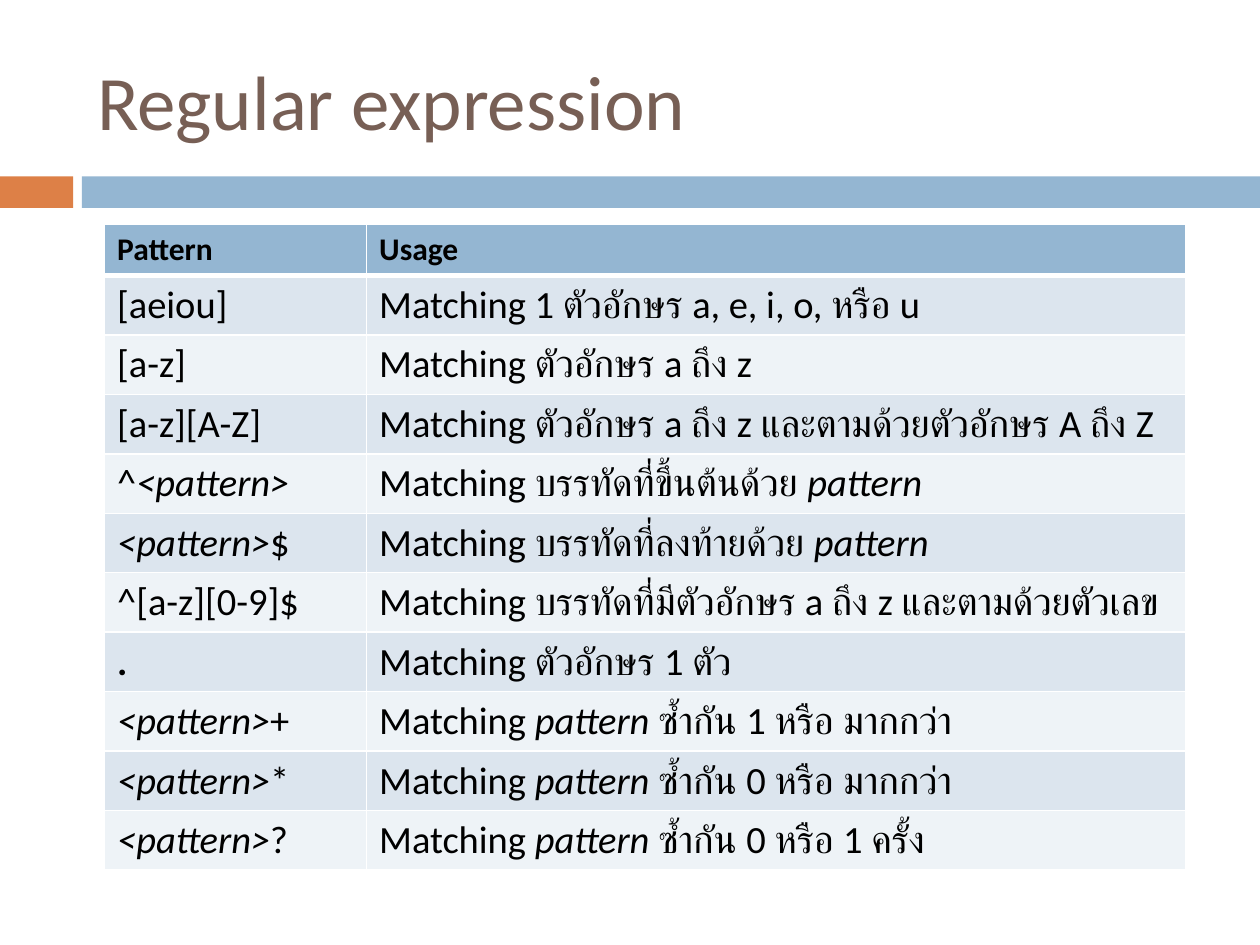
from typing import NamedTuple

from lxml import etree
from pptx import Presentation
from pptx import util as u
from pptx.dml import color
from pptx.enum import shapes, text
from pptx.oxml import ns

FONT = "Calibri"
WHITE, BLACK, BLUE = "FFFFFF", "000000", "94B6D2"
BANDS = "DCE5EE", "EEF3F7"


class Run(NamedTuple):
    words: str
    bold: bool = False
    slant: bool = False


class Bar(NamedTuple):
    left: float
    width: float
    fill: str


class Row(NamedTuple):
    pattern: list[Run]
    usage: list[Run]


SLOT = Run("<pattern>", slant=True)
NAME = Run("pattern", slant=True)
MATCH = Run("Matching ")


def repeat(sign: str, count: str) -> Row:
    return Row([SLOT, Run(sign)],
               [MATCH, Run("pattern ", slant=True), Run("ซ้ำกัน " + count)])


BARS = [Bar(0, 0.58, "DD8047"), Bar(0.65, 9.35, BLUE)]
ROWS = [
    Row([Run("Pattern", True)], [Run("Usage", True)]),
    Row([Run("[aeiou]")], [Run("Matching 1 ตัวอักษร a, e, i, o, หรือ u")]),
    Row([Run("[a-z]")], [Run("Matching ตัวอักษร a ถึง z")]),
    Row([Run("[a-z][A-Z]")],
        [Run("Matching ตัวอักษร a ถึง z และตามด้วยตัวอักษร A ถึง Z")]),
    Row([Run("^"), SLOT], [Run("Matching บรรทัดที่ขึ้นต้นด้วย "), NAME]),
    Row([SLOT, Run("$")], [Run("Matching บรรทัดที่ลงท้ายด้วย "), NAME]),
    Row([Run("^[a-z][0-9]$")],
        [Run("Matching บรรทัดที่มีตัวอักษร a ถึง z และตามด้วยตัวเลข")]),
    Row([Run(".", True)], [Run("Matching ตัวอักษร 1 ตัว")]),
    repeat("+", "1 หรือ มากกว่า"),
    repeat("*", "0 หรือ มากกว่า"),
    repeat("?", "0 หรือ 1 ครั้ง"),
]


def paint(fill, shade: str) -> None:
    fill.solid()
    fill.fore_color.rgb = color.RGBColor.from_string(shade)


def write(para, runs: list[Run], size: float, shade: str) -> None:
    for item in runs:
        run = para.add_run()
        run.text = item.words
        font = run.font
        font.name, font.size = FONT, u.Pt(size)
        font.bold, font.italic = item.bold, item.slant
        paint(font.fill, shade)


def draw_bar(slide, bar: Bar) -> None:
    box = slide.shapes.add_shape(
        shapes.MSO_SHAPE.RECTANGLE, u.Inches(bar.left), u.Inches(1.4),
        u.Inches(bar.width), u.Inches(0.25))
    box.shadow.inherit = False
    paint(box.fill, bar.fill)
    box.line.fill.background()


def edge(cell, side: str, width: float) -> None:
    line = etree.SubElement(cell._tc.get_or_add_tcPr(), ns.qn("a:ln" + side),
                            w=str(u.Pt(width)))
    fill = etree.SubElement(line, ns.qn("a:solidFill"))
    etree.SubElement(fill, ns.qn("a:srgbClr"), val=WHITE)


def draw_cell(cell, runs: list[Run], row: int) -> None:
    for side in "LRTB":
        thick = (row, side) in [(0, "B"), (1, "T")]
        edge(cell, side, 3 if thick else 1)
    paint(cell.fill, BANDS[(row - 1) % 2] if row else BLUE)
    write(cell.text_frame.paragraphs[0], runs, 22 if row else 18, BLACK)


def draw_table(slide) -> None:
    table = slide.shapes.add_table(
        len(ROWS), 2, u.Inches(0.83), u.Inches(1.78),
        u.Inches(8.58), u.Inches(5.1)).table
    for col, width in zip(table.columns, (2.08, 6.5)):
        col.width = u.Inches(width)
    for i, row in enumerate(ROWS):
        table.rows[i].height = u.Inches(0.47 if i else 0.4)
        for j, runs in enumerate(row):
            draw_cell(table.cell(i, j), runs, i)


def draw_title(slide) -> None:
    title = slide.shapes.title
    title.left, title.top = u.Inches(0.67), u.Inches(0.25)
    title.width, title.height = u.Inches(8.92), u.Inches(1.08)
    frame = title.text_frame
    frame.vertical_anchor = text.MSO_ANCHOR.MIDDLE
    para = frame.paragraphs[0]
    para.alignment = text.PP_ALIGN.LEFT
    write(para, [Run("Regular expression")], 44, "775F55")


def main() -> None:
    deck = Presentation()
    deck.slide_width, deck.slide_height = u.Inches(10), u.Inches(7.5)
    slide = deck.slides.add_slide(deck.slide_layouts[5])
    for bar in BARS:
        draw_bar(slide, bar)
    draw_title(slide)
    draw_table(slide)
    deck.save("out.pptx")


if __name__ == "__main__":
    main()
